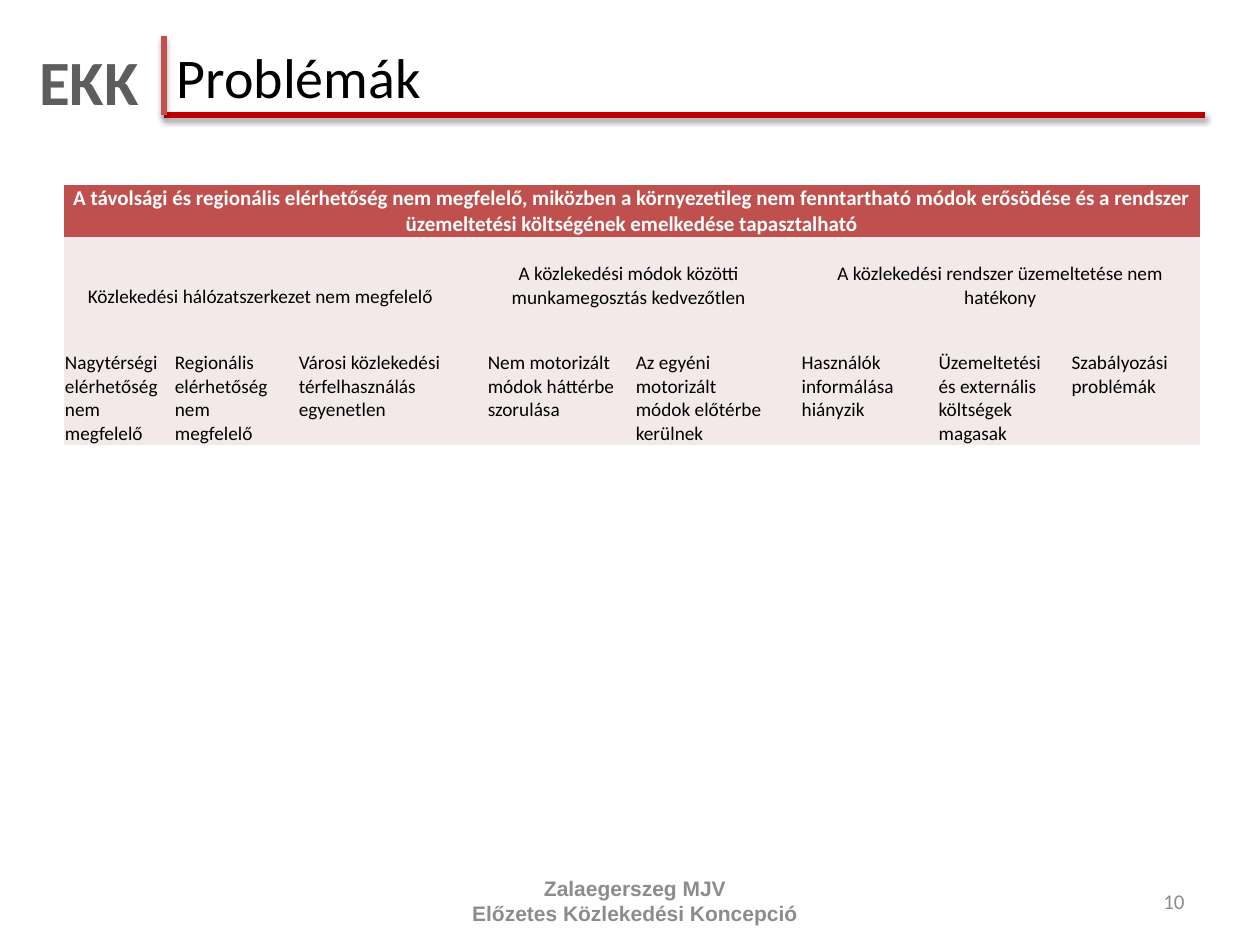
from lxml import etree
from pptx import Presentation
from pptx.dml.color import RGBColor
from pptx.enum.shapes import MSO_CONNECTOR
from pptx.enum.text import MSO_ANCHOR, PP_ALIGN
from pptx.oxml.ns import qn
from pptx.util import Pt

STRAIGHT = MSO_CONNECTOR.STRAIGHT
TOP, MIDDLE, BOTTOM = MSO_ANCHOR.TOP, MSO_ANCHOR.MIDDLE, MSO_ANCHOR.BOTTOM
LEFT, CENTER, RIGHT = PP_ALIGN.LEFT, PP_ALIGN.CENTER, PP_ALIGN.RIGHT

EMU_PER_PX = 914400 / 126
NO_STYLE_NO_GRID = "{2D5ABB26-0587-4C30-8999-92F81FD0307C}"
COLORS = {
    "rule": "C00000", "accent": "C0504D", "band": "F4E9E9", "logo": "5D5D5D",
    "text": "000000", "header": "FFFFFF", "muted": "8C8C8C", "shadow": "000000",
}

GAP = 15
COLUMNS = [93, 5, 10, 109, GAP, 159, GAP, GAP, 133, GAP, 136, GAP, GAP,
           122, GAP, 118, GAP, 129]
ROWS = [52, 24, 48, 41, 95]
CORE_PROBLEM = ("A távolsági és regionális elérhetőség nem megfelelő, miközben a "
                "környezetileg nem fenntartható módok erősödése és a rendszer "
                "üzemeltetési költségének emelkedése tapasztalható")
# first column, last column, wording
GROUPS = [
    (0, 5, "Közlekedési hálózatszerkezet nem megfelelő"),
    (8, 10, "A közlekedési módok közötti munkamegosztás kedvezőtlen"),
    (13, 17, "A közlekedési rendszer üzemeltetése nem hatékony"),
]
CAUSES = [
    (0, 1, "Nagytérségi elérhetőség nem megfelelő"),
    (3, 3, "Regionális elérhetőség nem megfelelő"),
    (5, 5, "Városi közlekedési térfelhasználás egyenetlen"),
    (8, 8, "Nem motorizált módok háttérbe szorulása"),
    (10, 10, "Az egyéni motorizált módok előtérbe kerülnek"),
    (13, 13, "Használók informálása hiányzik"),
    (15, 15, "Üzemeltetési és externális költségek magasak"),
    (17, 17, "Szabályozási problémák"),
]


def px(n):
    return round(n * EMU_PER_PX)


def color(name):
    return RGBColor.from_string(COLORS[name])


def write(tf, text, size=11, fill="text", bold=False, font="Calibri", align=LEFT):
    """Fill a text frame with one paragraph; newlines become line breaks."""
    p = tf.paragraphs[0]
    p.alignment = align
    for i, line in enumerate(text.split("\n")):
        if i:
            p.add_line_break()
        r = p.add_run()
        r.text = line
        r.font.name, r.font.size, r.font.bold = font, Pt(size), bold
        r.font.color.rgb = color(fill)


def add_text(slide, box, text, wrap=True, anchor=MIDDLE, **style):
    tf = slide.shapes.add_textbox(*map(px, box)).text_frame
    tf.word_wrap = wrap
    tf.vertical_anchor = anchor
    write(tf, text, **style)


def add_rule(slide, x1, y1, x2, y2, fill):
    """Draw a thick line with a soft shadow below it."""
    line = slide.shapes.add_connector(STRAIGHT, *map(px, (x1, y1, x2, y2)))
    line.line.color.rgb = color(fill)
    line.line.width = Pt(3)
    effects = etree.SubElement(line._element.spPr, qn("a:effectLst"))
    shadow = etree.SubElement(effects, qn("a:outerShdw"), blurRad=str(Pt(3.1)),
                              dist=str(Pt(1.8)), dir="5400000", rotWithShape="0")
    rgb = etree.SubElement(shadow, qn("a:srgbClr"), val=COLORS["shadow"])
    etree.SubElement(rgb, qn("a:alpha"), val="35000")


def add_heading(slide, x, y, w, h):
    corner, base = x + 138, y + h
    add_rule(slide, corner, base, x + w, base, "rule")
    add_rule(slide, corner, y, corner, base, "accent")
    add_text(slide, (x, y, 126, 89), "EKK", wrap=False, anchor=TOP,
             size=36, fill="logo", bold=True, align=CENTER)
    title = slide.shapes.title
    title.left, title.top = px(corner), px(y + 2)
    title.width, title.height = px(1033), px(77)
    title.text_frame.vertical_anchor = MIDDLE
    write(title.text_frame, "Problémák", size=32)


def fill_cell(table, row, first, last, text, anchor=BOTTOM, **style):
    cell = table.cell(row, first)
    if last > first:
        cell.merge(table.cell(row, last))
    cell.vertical_anchor = anchor
    cell.margin_left = cell.margin_right = cell.margin_top = px(1)
    write(cell.text_frame, text, **style)


def add_problem_table(slide, x, y):
    frame = slide.shapes.add_table(len(ROWS), len(COLUMNS), px(x), px(y),
                                   px(sum(COLUMNS)), px(sum(ROWS)))
    table = frame.table
    table._tbl.tblPr.find(qn("a:tableStyleId")).text = NO_STYLE_NO_GRID
    for col, width in zip(table.columns, COLUMNS):
        col.width = px(width)
    for i, (row, height) in enumerate(zip(table.rows, ROWS)):
        row.height = px(height)
        for cell in row.cells:
            cell.fill.solid()
            cell.fill.fore_color.rgb = color("band" if i else "accent")
            cell.margin_left = cell.margin_right = 0
            cell.margin_top = cell.margin_bottom = 0

    fill_cell(table, 0, 0, len(COLUMNS) - 1, CORE_PROBLEM,
              size=12, fill="header", bold=True, align=CENTER)
    for group in GROUPS:
        fill_cell(table, 2, *group, align=CENTER)
    for cause in CAUSES:
        fill_cell(table, 4, *cause, anchor=TOP)
    for row, first in ((1, 1), (3, 0)):
        table.cell(row, first).merge(table.cell(row, first + 1))

    # Small type in empty cells keeps the rows at their set height
    for cell in table.iter_cells():
        if not cell.text_frame.text:
            p = cell.text_frame.paragraphs[0]._p
            etree.SubElement(p, qn("a:endParaRPr"), sz="800")


def add_footer(slide, x, y, w, h):
    add_text(slide, (x + w - 294, y, 294, h), "10",
             size=12, fill="muted", align=RIGHT)
    add_text(slide, (x, y, 446, h), "Zalaegerszeg MJV\nElőzetes Közlekedési Koncepció",
             size=12, fill="muted", bold=True, font="Arial", align=CENTER)


def main():
    prs = Presentation()
    prs.slide_width, prs.slide_height = px(1260), px(945)
    slide = prs.slides.add_slide(prs.slide_layouts[5])
    add_heading(slide, 26, 36, 1179, 79)
    add_problem_table(slide, 64, 185)
    add_footer(slide, 412, 876, 785, 50)
    prs.save("out.pptx")


if __name__ == "__main__":
    main()
